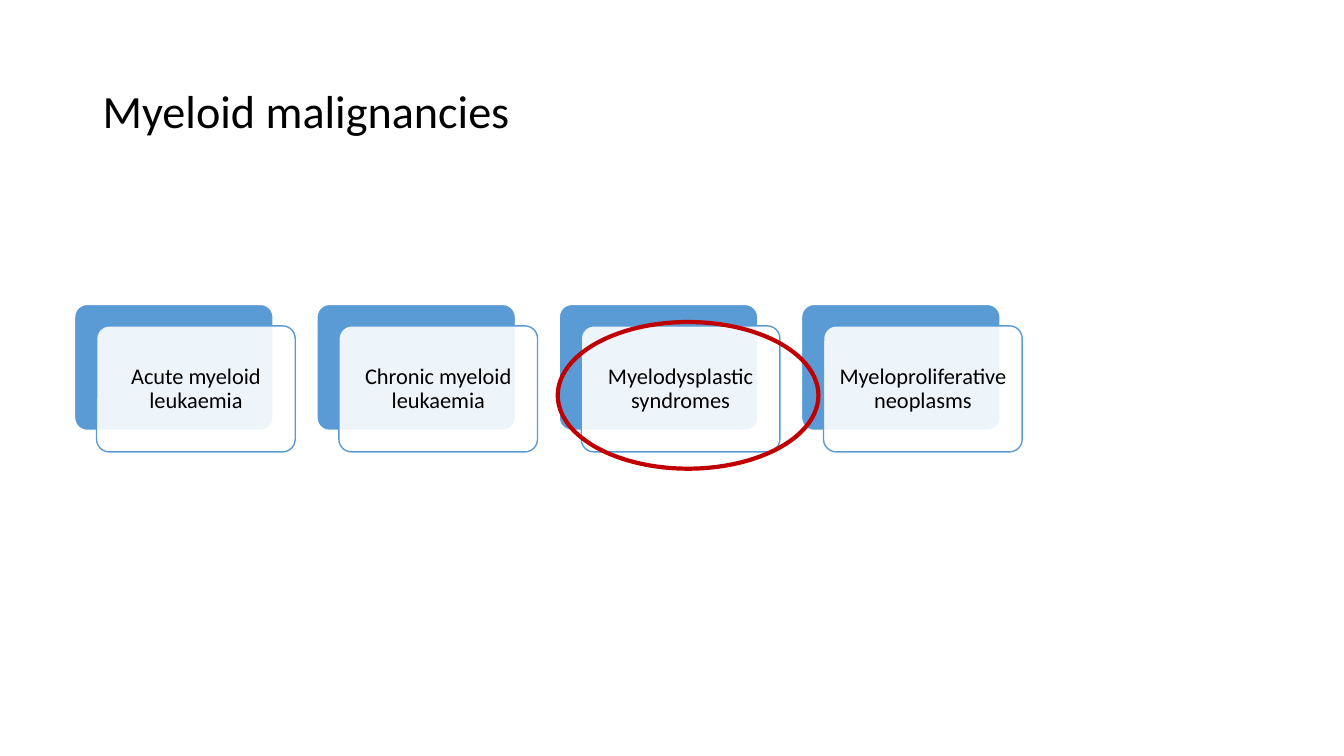
from lxml.etree import SubElement
from pptx import Presentation
from pptx.dml.color import RGBColor
from pptx.enum.shapes import MSO_SHAPE
from pptx.enum.text import MSO_ANCHOR, PP_ALIGN
from pptx.oxml.ns import qn
from pptx.util import Inches, Pt

BLACK = RGBColor(0x00, 0x00, 0x00)
WHITE = RGBColor(0xFF, 0xFF, 0xFF)
BLUE = RGBColor(0x5B, 0x9B, 0xD5)
RED = RGBColor(0xC0, 0x00, 0x00)

COLUMNS = ROWS = 100
MALIGNANCIES = [
    "Acute myeloid leukaemia",
    "Chronic myeloid leukaemia",
    "Myelodysplastic syndromes",
    "Myeloproliferative neoplasms",
]
CARD_LEFT, CARD_TOP, CARD_STEP = 5.55, 40.27, 18.03
CARD_SIZE = 14.78, 16.67
SHIFT_X, SHIFT_Y = 1.64, 2.84
INSET_X, INSET_Y = 0.3, 0.47


def write(tf, text, size, color=BLACK, font="Calibri", align=PP_ALIGN.LEFT, margin=None):
    tf.word_wrap = True
    tf.vertical_anchor = MSO_ANCHOR.MIDDLE
    if margin is not None:
        tf.margin_left = tf.margin_right = Inches(margin)
        tf.margin_top = tf.margin_bottom = Inches(margin)
    p = tf.paragraphs[0]
    p.alignment = align
    p.line_spacing = 0.9
    r = p.add_run()
    r.text = text
    r.font.name = font
    r.font.size = Pt(size)
    r.font.color.rgb = color


class Deck:
    def __init__(self):
        self.prs = Presentation()
        self.prs.slide_width = Inches(13.33)
        self.prs.slide_height = Inches(7.5)
        self.slide = self.prs.slides.add_slide(self.prs.slide_layouts[6])

    def place(self, x, y, w, h):
        col = self.prs.slide_width / COLUMNS
        row = self.prs.slide_height / ROWS
        return [round(v) for v in (x * col, y * row, w * col, h * row)]

    def text(self, x, y, w, h, text, **style):
        sp = self.slide.shapes.add_textbox(*self.place(x, y, w, h))
        write(sp.text_frame, text, **style)

    def shape(self, kind, x, y, w, h, line, width, fill=None, opacity=100):
        sp = self.slide.shapes.add_shape(kind, *self.place(x, y, w, h))
        sp.shadow.inherit = False
        sp.line.color.rgb = line
        sp.line.width = Pt(width)
        if fill is None:
            sp.fill.background()
        else:
            sp.fill.solid()
            sp.fill.fore_color.rgb = fill
        if opacity < 100:
            color = sp.fill._xPr.find(qn("a:solidFill"))[0]
            SubElement(color, qn("a:alpha"), val=str(opacity * 1000))
        return sp

    def panel(self, x, y, **style):
        sp = self.shape(MSO_SHAPE.ROUNDED_RECTANGLE, x, y, *CARD_SIZE, width=1, **style)
        sp.adjustments[0] = 0.1

    def card(self, x, y, text):
        self.panel(x, y, fill=BLUE, line=WHITE)
        x, y = x + SHIFT_X, y + SHIFT_Y
        self.panel(x, y, fill=WHITE, line=BLUE, opacity=90)
        w, h = CARD_SIZE
        self.text(x + INSET_X, y + INSET_Y, w - 2 * INSET_X, h - 2 * INSET_Y, text,
                  size=16, align=PP_ALIGN.CENTER, margin=0.07)


def main():
    deck = Deck()
    deck.text(6.9, 5.33, 86.27, 19.33, "Myeloid malignancies", size=33)
    for i, name in enumerate(MALIGNANCIES):
        deck.card(CARD_LEFT + i * CARD_STEP, CARD_TOP, name)
    deck.shape(MSO_SHAPE.OVAL, 41.5, 42.6, 19.4, 19.4, line=RED, width=3)
    deck.prs.save("out.pptx")


if __name__ == "__main__":
    main()
